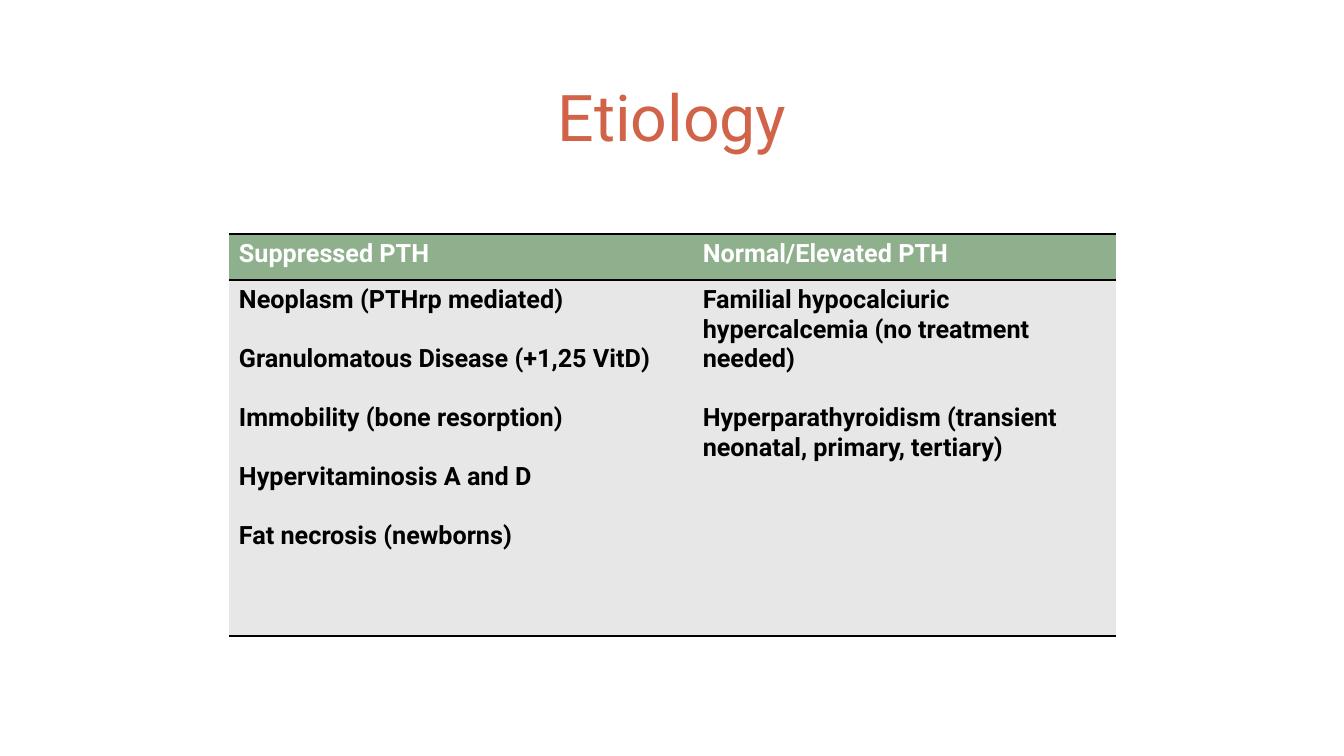
from pptx import Presentation
from pptx.dml.color import RGBColor as RGB
from pptx.enum.text import MSO_ANCHOR as Anchor, PP_ALIGN as Align
from pptx.oxml import parse_xml
from pptx.oxml.ns import nsdecls, qn
from pptx.util import Inches, Pt

PLAIN = "{2D5ABB26-0587-4C30-8999-92F81FD0307C}"
CAUSES = {
    "Suppressed PTH": [
        "Neoplasm (PTHrp mediated)",
        "Granulomatous Disease (+1,25 VitD)",
        "Immobility (bone resorption)",
        "Hypervitaminosis A and D",
        "Fat necrosis (newborns)",
    ],
    "Normal/Elevated PTH": [
        "Familial hypocalciuric hypercalcemia (no treatment needed)",
        "Hyperparathyroidism (transient neonatal, primary, tertiary)",
    ],
}


def color(code):
    return RGB.from_string(code)


def style(para, size, code, bold=False):
    font = para.font
    font.name = "Roboto"
    font.size = Pt(size)
    font.bold = bold
    font.color.rgb = color(code)


def border(cell, side):
    line = parse_xml(
        f'<a:{side} {nsdecls("a")} w="{Pt(2)}"><a:solidFill>'
        f'<a:srgbClr val="000000"/></a:solidFill></a:{side}>'
    )
    cell._tc.get_or_add_tcPr().insert(0, line)


def fill_cell(cell, lines, back, code):
    cell.fill.solid()
    cell.fill.fore_color.rgb = color(back)
    cell.text = "\n".join(lines)
    paras = cell.text_frame.paragraphs
    for para in paras:
        style(para, 18, code, True)
    for para in paras[:-1]:
        para.space_after = Pt(21.1)
    border(cell, "lnB")


def add_title(slide, text, left, top, width, height):
    box = slide.shapes.add_textbox(*map(Inches, (left, top, width, height)))
    frame = box.text_frame
    frame.word_wrap = True
    frame.vertical_anchor = Anchor.BOTTOM
    para = frame.paragraphs[0]
    para.text = text
    para.alignment = Align.CENTER
    style(para, 46, "D16349")


def add_grid(slide, left, top, width, height):
    split, head = 4.6, 0.46
    spot = map(Inches, (left, top, width, height))
    table = slide.shapes.add_table(2, len(CAUSES), *spot).table
    table.first_row = table.horz_banding = False
    table._tbl.tblPr.find(qn("a:tableStyleId")).text = PLAIN
    for col, size in zip(table.columns, (split, width - split)):
        col.width = Inches(size)
    for row, size in zip(table.rows, (head, height - head)):
        row.height = Inches(size)
    for col, (name, lines) in enumerate(CAUSES.items()):
        top_cell = table.cell(0, col)
        fill_cell(top_cell, [name], "8FB08C", "FFFFFF")
        border(top_cell, "lnT")
        fill_cell(table.cell(1, col), lines, "E7E7E7", "000000")


def main():
    deck = Presentation()
    deck.slide_width, deck.slide_height = Inches(13.33), Inches(7.5)
    slide = deck.slides.add_slide(deck.slide_layouts[6])
    add_title(slide, "Etiology", 0.8, 0.12, 11.73, 1.46)
    add_grid(slide, 2.27, 2.32, 8.8, 3.99)
    deck.save("out.pptx")


if __name__ == "__main__":
    main()
